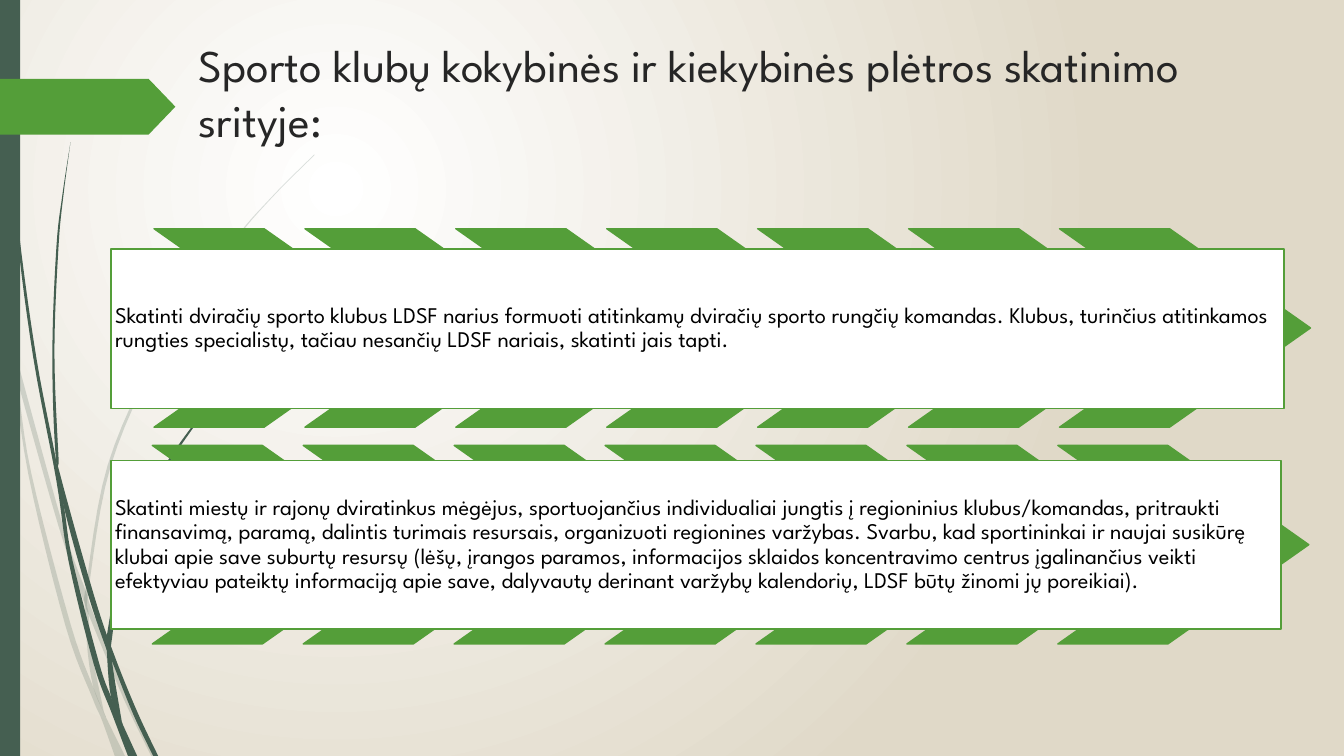
from lxml.etree import SubElement
from pptx import Presentation
from pptx.dml.color import RGBColor
from pptx.enum.shapes import MSO_SHAPE
from pptx.enum.text import MSO_ANCHOR, MSO_AUTO_SIZE, PP_ALIGN
from pptx.oxml.ns import qn
from pptx.util import Pt

FONT = "League Spartan"
GREEN, DARK, WHITE, SAND = "549E39", "455F51", "FFFFFF", "E0D9C8"

# Each blade: one edge from its top down, then the other edge back up
FAINT_BLADES = [
    ([(0, 203), (6.5, 232), (10, 248.4), (44.6, 374.4), (61.2, 422), (66.2, 437),
      (91.4, 498.2), (111.6, 540)],
     [(108, 540), (88.6, 499.7), (63.4, 439.2), (60.5, 431.3), (41.8, 375.8),
      (12.2, 270.7), (7.2, 247.7), (0, 215.3)]),
    ([(8, 252), (20.2, 338.4), (46.8, 447), (66.2, 499), (72.7, 514), (82, 540)],
     [(89.3, 540), (75.6, 512), (67, 491.8), (50.4, 445.7), (22.3, 337.7),
      (12.2, 270.7), (8, 252)]),
    ([(224.6, 110.2), (193, 141.8), (164.2, 175.7), (113.8, 250.6), (77, 332),
      (61.2, 420.5), (60.5, 431.3), (62.6, 465), (67, 491.8), (75.6, 512)],
     [(74.2, 508.3), (65.5, 465), (63.4, 439.2), (63.4, 420.5), (79.2, 332.6),
      (115.2, 251.3), (164.9, 176.4), (193, 142.6), (224.6, 110.9)]),
]
DARK_BLADES = [
    ([(2.2, 0), (5, 79.2), (12.2, 167.8), (23.8, 255.6), (40.3, 343.4), (49, 401),
      (67, 474.5), (80, 509.8), (91.4, 540)],
     [(98, 540), (87.8, 517.7), (79.2, 497.5), (70.6, 473), (51.8, 400.3),
      (46, 363.6), (39.6, 326.2), (26, 255.6), (13.7, 167), (5.8, 78.5), (2.9, 0)]),
    ([(50.4, 101.5), (44.6, 139), (40.3, 176.4), (37.4, 251.3), (39.6, 323.3),
      (46, 363.6), (63.4, 426.2), (76.3, 464.4), (80, 472.3), (95, 509.8), (109.4, 540)],
     [(113, 540), (98, 508.3), (81.4, 467.3), (67, 424.8), (43.2, 339.8),
      (41.8, 326.2), (38.9, 251.3), (41.8, 176.4), (45.4, 139), (50.4, 101.5)]),
    ([(187.9, 247.7), (166.3, 268.6), (146.9, 291.6), (112.3, 341.3), (87.8, 396.7),
      (76.3, 454.3), (76.3, 464.4), (79.2, 497.5), (87.8, 517.7)],
     [(87, 515.5), (80, 472.3), (80, 455.8), (90, 397.4), (113.8, 342.7),
      (147.6, 292.3), (166.3, 269.3), (187.9, 247.7)]),
]

TITLE = "Sporto klubų kokybinės ir kiekybinės plėtros skatinimo srityje:"
GOALS = [
    {"box": (79.2, 177.84, 838, 113.8), "chevrons": (110, 163.4),
     "text": "Skatinti dviračių sporto klubus LDSF narius formuoti atitinkamų dviračių "
             "sporto rungčių komandas. Klubus, turinčius atitinkamos rungties specialistų, "
             "tačiau nesančių LDSF nariais, skatinti jais tapti."},
    {"box": (79.2, 329.04, 836, 120.2), "chevrons": (108.8, 318.2),
     "text": "Skatinti miestų ir rajonų dviratinkus mėgėjus, sportuojančius individualiai "
             "jungtis į regioninius klubus/komandas, pritraukti finansavimą, paramą, "
             "dalintis turimais resursais, organizuoti regionines varžybas. Svarbu, kad "
             "sportininkai ir naujai susikūrę klubai apie save suburtų resursų (lėšų, "
             "įrangos paramos, informacijos sklaidos koncentravimo centrus įgalinančius "
             "veikti efektyviau pateiktų informaciją apie save, dalyvautų derinant varžybų "
             "kalendorių, LDSF būtų žinomi jų poreikiai)."},
]


def rgb(value):
    return RGBColor.from_string(value)


def apply(obj, values):
    for name, value in values.items():
        setattr(obj, name, value)


def paint(sp, fill, line=None):
    sp.shadow.inherit = False
    sp.fill.solid()
    sp.fill.fore_color.rgb = rgb(fill)
    if line:
        sp.line.color.rgb = rgb(line)
        sp.line.width = Pt(1)
    else:
        sp.line.fill.background()


def add_shape(s, kind, box, fill, line=None):
    sp = s.shapes.add_shape(kind, *[Pt(v) for v in box])
    paint(sp, fill, line)
    return sp


def write(tf, text, size, color, frame, para):
    apply(tf, {"word_wrap": True, "auto_size": MSO_AUTO_SIZE.NONE, **frame})
    p = tf.paragraphs[0]
    apply(p, {"alignment": PP_ALIGN.LEFT, **para})
    r = p.add_run()
    r.text = text
    apply(r.font, {"name": FONT, "size": Pt(size)})
    r.font.color.rgb = rgb(color)


def smooth_edge(points, steps=6):
    """Catmull-Rom curve through the points."""
    padded = [points[0], *points, points[-1]]
    curve = [points[0]]
    for a, b, c, d in zip(padded, padded[1:], padded[2:], padded[3:]):
        for i in range(1, steps + 1):
            t = i / steps
            curve.append(tuple(
                b[k] + t / 2 * (c[k] - a[k]
                                + t * (2 * a[k] - 5 * b[k] + 4 * c[k] - d[k])
                                + t * t * (3 * b[k] - a[k] - 3 * c[k] + d[k]))
                for k in (0, 1)))
    return curve


def add_blade(s, edges, opacity):
    outline = [(Pt(x), Pt(y)) for edge in edges for x, y in smooth_edge(edge)]
    builder = s.shapes.build_freeform(*outline[0])
    builder.add_line_segments(outline[1:], close=True)
    sp = builder.convert_to_shape()
    paint(sp, DARK)
    if opacity < 100:
        color = next(sp.element.spPr.iter(qn("a:srgbClr")))
        SubElement(color, qn("a:alpha")).set("val", str(opacity * 1000))


def add_background(s):
    fill = s.background.fill
    fill.gradient()
    for stop, color in zip(fill.gradient_stops, (WHITE, SAND)):
        stop.color.rgb = rgb(color)
    # Radial gradient centred in the upper left
    grad = next(s.element.iter(qn("a:gradFill")))
    grad.remove(grad.find(qn("a:lin")))
    radial = SubElement(grad, qn("a:path"))
    radial.set("path", "circle")
    rect = SubElement(radial, qn("a:fillToRect"))
    for side, value in zip("ltrb", (50000, 50000, 100000, 100000)):
        rect.set(side, str(value))


def add_decoration(s):
    # Grass blades
    for blades, opacity in ((FAINT_BLADES, 20), (DARK_BLADES, 100)):
        for edges in blades:
            add_blade(s, edges, opacity)
    # Side bar and title marker
    add_shape(s, MSO_SHAPE.RECTANGLE, (0, 0, 14.4, 540), DARK)
    marker = add_shape(s, MSO_SHAPE.PENTAGON, (0, 56.3, 125.3, 39.9), GREEN)
    marker.adjustments[0] = 0.48


def add_title(s, box):
    title = s.shapes.title
    apply(title, dict(zip(("left", "top", "width", "height"), map(Pt, box))))
    write(title.text_frame, TITLE, 32.4, "262626",
          {"vertical_anchor": MSO_ANCHOR.TOP}, {})


def add_goal(s, box, chevrons, text):
    # Row of chevrons behind the panel
    left, top = chevrons
    for i in range(7):
        sp = add_shape(s, MSO_SHAPE.CHEVRON, (left + i * 107.8, top, 179.3, 141.8),
                       GREEN, GREEN)
        sp.adjustments[0] = 0.71
    # Text panel
    panel = add_shape(s, MSO_SHAPE.RECTANGLE, box, WHITE, GREEN)
    margins = dict.fromkeys(
        ("margin_left", "margin_top", "margin_right", "margin_bottom"), Pt(3))
    write(panel.text_frame, text, 16, "000000",
          {"vertical_anchor": MSO_ANCHOR.MIDDLE, **margins}, {"line_spacing": 0.9})


def main():
    prs = Presentation()
    apply(prs, {"slide_width": Pt(960), "slide_height": Pt(540)})
    s = prs.slides.add_slide(prs.slide_layouts[5])
    add_background(s)
    add_decoration(s)
    add_title(s, (134.6, 23, 799.2, 84.2))
    for goal in GOALS:
        add_goal(s, **goal)
    prs.save("out.pptx")


if __name__ == "__main__":
    main()
